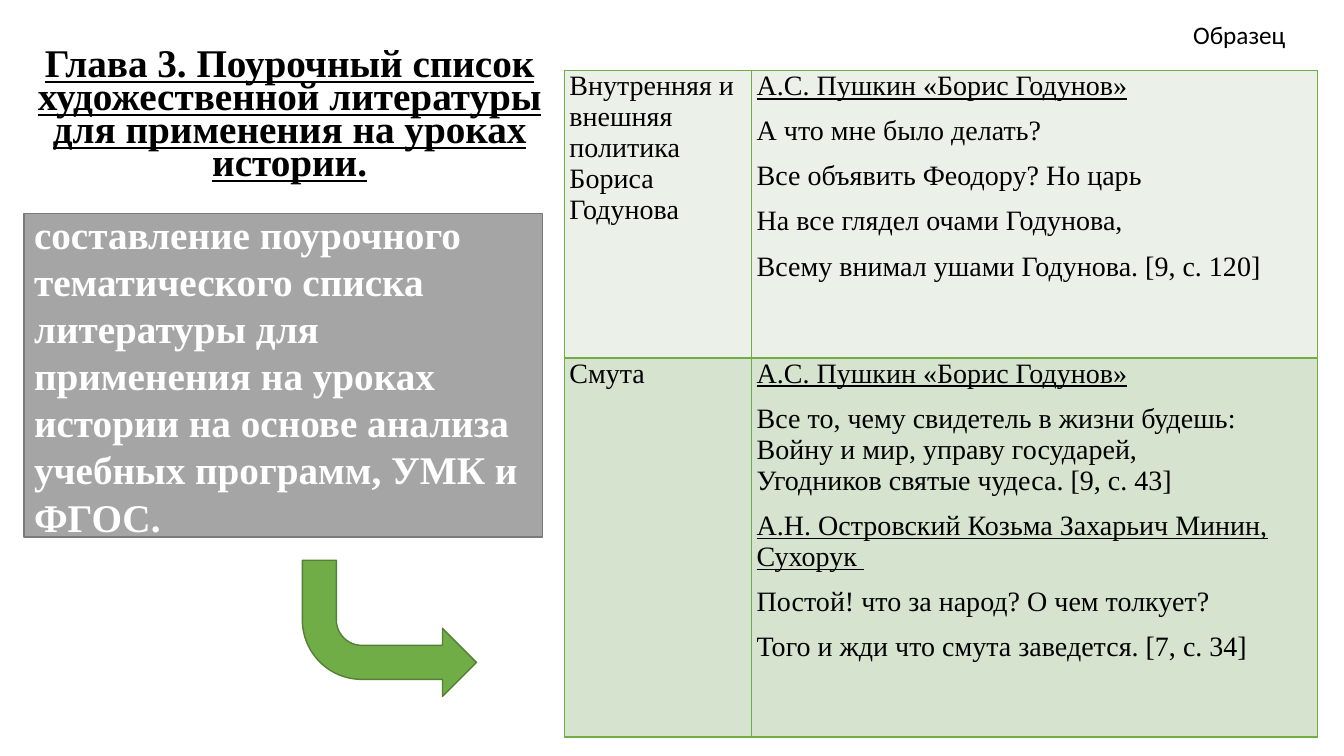
"""Build the slide about the lesson-by-lesson reading list for history classes."""
from dataclasses import dataclass

import lxml.etree
import pptx
import pptx.dml.color
import pptx.enum.shapes
import pptx.enum.text
import pptx.oxml.ns
import pptx.util

Cm = pptx.util.Cm
Pt = pptx.util.Pt
qn = pptx.oxml.ns.qn
ALIGN = pptx.enum.text.PP_ALIGN
ANCHOR = pptx.enum.text.MSO_ANCHOR
SHAPE = pptx.enum.shapes.MSO_SHAPE
SERIF = "Times New Roman"
BLACK = "000000"
GREEN = "70AD47"


@dataclass
class Style:
    """Character formatting of a run."""
    size: float
    color: str = BLACK
    font: str = SERIF
    bold: bool = False
    underline: bool = False


@dataclass
class Area:
    """Position and size in centimetres."""
    left: float
    top: float
    width: float
    height: float

    def lengths(self) -> tuple:
        """Return the four lengths for python-pptx."""
        return Cm(self.left), Cm(self.top), Cm(self.width), Cm(self.height)


@dataclass
class Passage:
    """One paragraph of a table cell; work titles are underlined."""
    text: str
    is_work: bool = False


@dataclass
class Topic:
    """One table row: a lesson topic and its quotations."""
    name: str
    passages: list
    height: float
    fill: str


TITLE = "Глава 3. Поурочный список художественной литературы для применения на уроках истории."
GOAL = ("составление поурочного тематического списка литературы для применения "
        "на уроках истории на основе анализа учебных программ, УМК и ФГОС.")
GODUNOV = Passage("А.С. Пушкин «Борис Годунов»", True)
TOPICS = [
    Topic("Внутренняя и внешняя политика Бориса Годунова", [
        GODUNOV,
        Passage("А что мне было делать?"),
        Passage("Все объявить Феодору? Но царь"),
        Passage("На все глядел очами Годунова,"),
        Passage("Всему внимал ушами Годунова. [9, c. 120]"),
    ], 7.24, "EBF1E9"),
    Topic("Смута", [
        GODUNOV,
        Passage("Все то, чему свидетель в жизни будешь:\n"
                "Войну и мир, управу государей,\n"
                "Угодников святые чудеса. [9, c. 43]"),
        Passage("А.Н. Островский Козьма Захарьич Минин, Сухорук ", True),
        Passage("Постой! что за народ? О чем толкует?"),
        Passage("Того и жди что смута заведется. [7, c. 34]"),
    ], 9.55, "D5E3CF"),
]
COLUMN_WIDTHS = (4.72, 14.27)


def rgb(color: str) -> pptx.dml.color.RGBColor:
    """Turn a hex string into a colour."""
    return pptx.dml.color.RGBColor.from_string(color)


def add_text(para, text: str, style: Style) -> None:
    """Add styled runs to a paragraph, with a line break at each newline."""
    for index, line in enumerate(text.split("\n")):
        if index:
            para.add_line_break()
        span = para.add_run()
        span.text = line
        span.font.size = Pt(style.size)
        span.font.name = style.font
        span.font.bold = style.bold
        span.font.underline = style.underline
        span.font.color.rgb = rgb(style.color)


def add_box(page, area: Area, text: str, style: Style, align=ALIGN.LEFT, spacing: float = 1.0) -> None:
    """Add a wrapping text box."""
    box = page.shapes.add_textbox(*area.lengths())
    box.text_frame.word_wrap = True
    para = box.text_frame.paragraphs[0]
    para.alignment = align
    para.line_spacing = spacing
    add_text(para, text, style)


def add_figure(page, kind, area: Area, fill: str, line: str):
    """Add a filled and outlined preset shape."""
    figure = page.shapes.add_shape(kind, *area.lengths())
    figure.shadow.inherit = False
    figure.fill.solid()
    figure.fill.fore_color.rgb = rgb(fill)
    figure.line.color.rgb = rgb(line)
    figure.line.width = Pt(1)
    return figure


def fill_cell(cell, passages: list, fill: str) -> None:
    """Write passages into a cell and set its borders and fill."""
    cell.margin_left = cell.margin_right = Cm(0.13)
    cell.margin_top = cell.margin_bottom = 0
    properties = cell._tc.get_or_add_tcPr()
    for side in ("a:lnL", "a:lnR", "a:lnT", "a:lnB"):
        border = lxml.etree.SubElement(properties, qn(side), w=str(Pt(1)))
        paint = lxml.etree.SubElement(border, qn("a:solidFill"))
        lxml.etree.SubElement(paint, qn("a:srgbClr"), val=GREEN)
    cell.fill.solid()
    cell.fill.fore_color.rgb = rgb(fill)
    for index, passage in enumerate(passages):
        para = cell.text_frame.add_paragraph() if index else cell.text_frame.paragraphs[0]
        para.space_after = Pt(10)
        add_text(para, passage.text, Style(20, underline=passage.is_work))


def add_topic_table(page, area: Area) -> None:
    """Add the table of topics and quotations."""
    table = page.shapes.add_table(len(TOPICS), len(COLUMN_WIDTHS), *area.lengths()).table
    table.first_row = table.horz_banding = False
    for column, width in zip(table.columns, COLUMN_WIDTHS):
        column.width = Cm(width)
    for row, topic in zip(table.rows, TOPICS):
        row.height = Cm(topic.height)
        fill_cell(row.cells[0], [Passage(topic.name)], topic.fill)
        fill_cell(row.cells[1], topic.passages, topic.fill)


def main() -> None:
    """Draw the slide and save the deck."""
    deck = pptx.Presentation()
    deck.slide_width, deck.slide_height = Cm(33.87), Cm(19.05)
    page = deck.slides.add_slide(deck.slide_layouts[6])

    add_box(page, Area(0.43, 1.17, 13.74, 3.89), TITLE,
            Style(28, bold=True, underline=True), ALIGN.CENTER, 0.7)

    goal = add_figure(page, SHAPE.RECTANGLE, Area(0.61, 5.38, 13.06, 8.15), "A5A5A5", "7A7A7A")
    goal.text_frame.word_wrap = True
    goal.text_frame.vertical_anchor = ANCHOR.MIDDLE
    para = goal.text_frame.paragraphs[0]
    para.alignment = ALIGN.LEFT
    add_text(para, GOAL, Style(28, "FFFFFF", bold=True))

    add_topic_table(page, Area(14.22, 1.78, sum(COLUMN_WIDTHS), 16.79))
    add_box(page, Area(29.82, 0.36, 3.12, 1.02), "Образец", Style(18, font="Calibri"))

    arrow = add_figure(page, SHAPE.BENT_ARROW, Area(7.62, 14.12, 4.39, 3.43), GREEN, "538035")
    arrow._element.spPr.find(qn("a:xfrm")).set("flipV", "1")
    deck.save("out.pptx")


if __name__ == "__main__":
    main()
